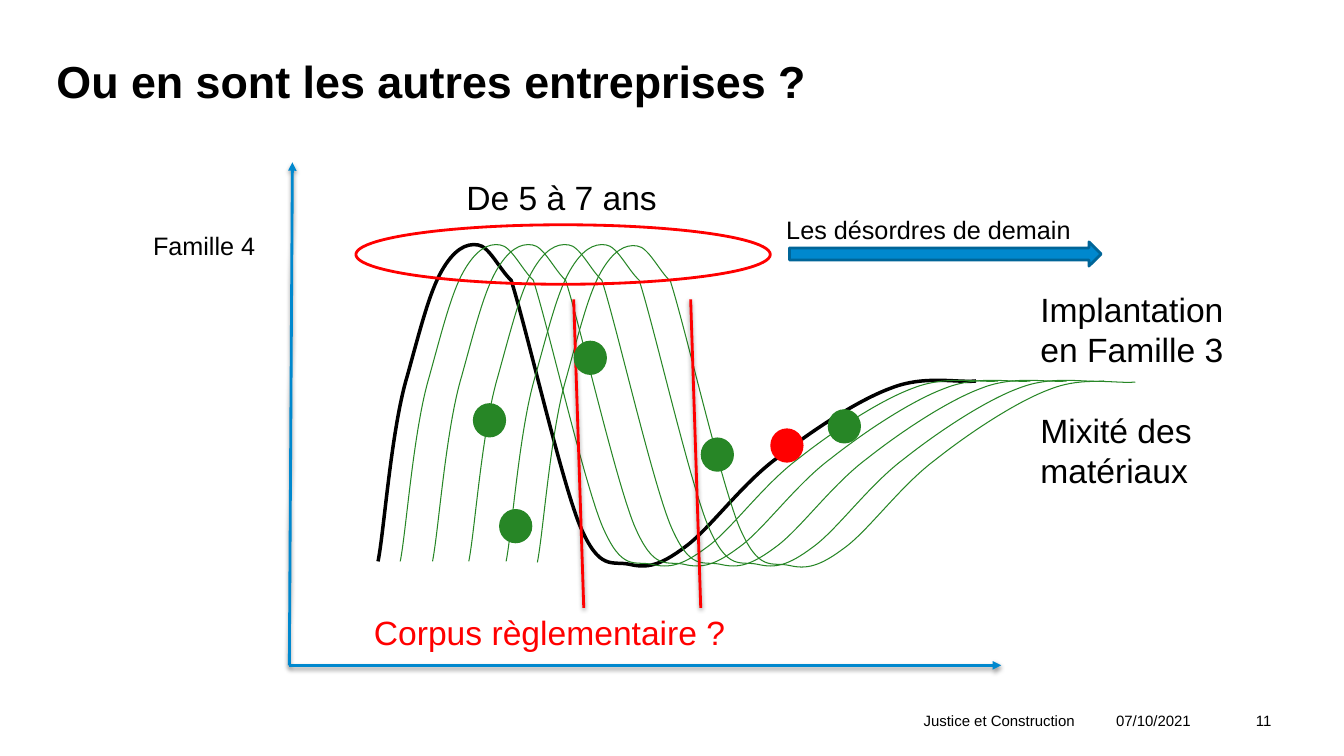
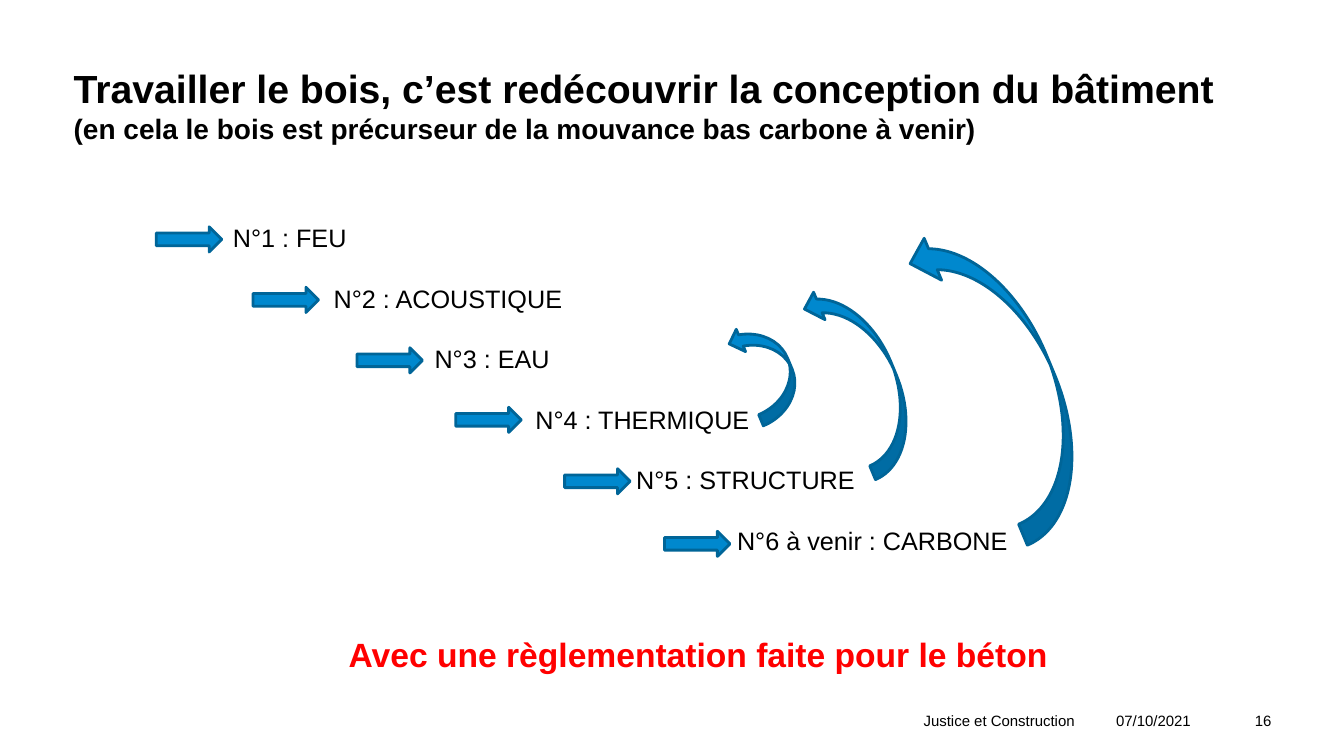
"""Build two slides on the state of timber construction and its regulation."""
import copy

import pptx
import pptx.dml.color
import pptx.enum.shapes
import pptx.enum.text
import pptx.oxml
import pptx.oxml.ns
import pptx.util

Inches = pptx.util.Inches
Pt = pptx.util.Pt
RGBColor = pptx.dml.color.RGBColor
Shape = pptx.enum.shapes.MSO_SHAPE
Align = pptx.enum.text.PP_ALIGN
qualified = pptx.oxml.ns.qn

BLACK = RGBColor(0x00, 0x00, 0x00)
RED = RGBColor(0xFF, 0x00, 0x00)
GREEN = RGBColor(0x27, 0x86, 0x26)
BLUE = RGBColor(0x00, 0x88, 0xCE)
DARK_BLUE = RGBColor(0x00, 0x65, 0x98)
FONT = "Arial"
DRAWING = pptx.oxml.ns.nsdecls("a")
SHADOW = (
    f'<a:effectLst {DRAWING}><a:outerShdw blurRad="39370" dist="20320" dir="5400000" rotWithShape="0">'
    '<a:srgbClr val="000000"><a:alpha val="38000"/></a:srgbClr></a:outerShdw></a:effectLst>'
)


def write(shape, box, text, size, color=BLACK, bold=False, align=Align.LEFT):
    """Place a text shape and format all its paragraphs."""
    shape.left, shape.top, shape.width, shape.height = [Inches(value) for value in box]
    text_frame = shape.text_frame
    text_frame.word_wrap = True
    text_frame.auto_size = pptx.enum.text.MSO_AUTO_SIZE.NONE
    text_frame.text = text
    for paragraph in text_frame.paragraphs:
        paragraph.alignment = align
        for run in paragraph.runs:
            run.font.name = FONT
            run.font.size = Pt(size)
            run.font.bold = bold
            run.font.color.rgb = color
    return text_frame


def draw(slide, kind, box, fill=None, line=None):
    """Add a preset shape with the given fill and outline."""
    shape = slide.shapes.add_shape(kind, *[Inches(value) for value in box])
    shape.shadow.inherit = False
    if fill is None:
        shape.fill.background()
    else:
        shape.fill.solid()
        shape.fill.fore_color.rgb = fill
    if line is None:
        shape.line.fill.background()
    else:
        shape.line.color.rgb = line
        shape.line.width = Pt(2)
    return shape


presentation = pptx.Presentation()
presentation.slide_width = Inches(13.33)
presentation.slide_height = Inches(7.5)

slides = []
for layout_index, number, title, box, sizes in (
    (5, "11", "Ou en sont les autres entreprises ?", (0.56, 0.52, 11.87, 0.56), (32,)),
    (1, "16", "Travailler le bois, c’est redécouvrir la conception du bâtiment\v"
     "(en cela le bois est précurseur de la mouvance bas carbone à venir)",
     (0.73, 0.43, 11.87, 1.21), (28, 20)),
):
    slide = presentation.slides.add_slide(presentation.slide_layouts[layout_index])
    slides.append(slide)
    title_frame = write(slide.shapes.title, box, title, sizes[0], bold=True)
    title_frame.vertical_anchor = pptx.enum.text.MSO_ANCHOR.MIDDLE
    title_frame.margin_left = title_frame.margin_right = 0
    title_paragraph = title_frame.paragraphs[0]
    for run, size in zip(title_paragraph.runs, sizes):
        run.font.size = Pt(size)
    for line_break in title_paragraph._p.findall(qualified("a:br")):
        line_break.append(copy.deepcopy(title_paragraph.runs[0]._r.rPr))
    for text, left, width in (
        ("Justice et Construction", 4.13, 6.63),
        ("07/10/2021", 10.76, 1.15),
        (number, 11.91, 0.8),
    ):
        write(slide.shapes.add_textbox(0, 0, 0, 0), (left, 7.01, width, 0.39), text, 10.7, align=Align.RIGHT)

curve_slide, steps_slide = slides

CURVE_START = (3.75, 5.57)
CURVE_SEGMENTS = (
    ((3.81, 5.27), (3.88, 4.26), (4.04, 3.73)),
    ((4.17, 3.26), (4.26, 2.9), (4.38, 2.69)),
    ((4.5, 2.48), (4.62, 2.41), (4.74, 2.43)),
    ((4.85, 2.44), (4.96, 2.68), (5.07, 2.78)),
    ((5.22, 3.25), (5.56, 4.74), (5.75, 5.21)),
    ((5.95, 5.68), (6.07, 5.56), (6.25, 5.6)),
    ((6.42, 5.64), (6.55, 5.61), (6.79, 5.43)),
    ((7.03, 5.26), (7.35, 4.81), (7.7, 4.55)),
    ((8.04, 4.28), (8.51, 3.97), (8.84, 3.85)),
    ((9.17, 3.72), (9.5, 3.8), (9.68, 3.78)),
)
anchors = [CURVE_START] + [segment[-1] for segment in CURVE_SEGMENTS]
curve_left = min(x for x, y in anchors)
curve_top = min(y for x, y in anchors)

for shift_x, shift_y, color, width in (
    (0, 0, BLACK, 2.5),
    (0.22, 0, GREEN, 0.75),
    (0.54, 0, GREEN, 0.75),
    (0.9, 0, GREEN, 0.75),
    (1.27, 0, GREEN, 0.75),
    (1.58, 0.01, GREEN, 0.75),
):
    points = [(Inches(x + shift_x), Inches(y + shift_y)) for x, y in anchors]
    builder = curve_slide.shapes.build_freeform(*points[0])
    builder.add_line_segments(points[1:], close=False)
    curve = builder.convert_to_shape()
    curve.shadow.inherit = False
    curve.fill.background()
    curve.line.color.rgb = color
    curve.line.width = Pt(width)
    straight_parts = list(curve._element.iter(qualified("a:lnTo")))
    for straight_part, segment in zip(straight_parts, CURVE_SEGMENTS):
        controls = "".join(
            f'<a:pt x="{Inches(x - curve_left)}" y="{Inches(y - curve_top)}"/>' for x, y in segment
        )
        straight_part.getparent().replace(
            straight_part,
            pptx.oxml.parse_xml(f"<a:cubicBezTo {DRAWING}>{controls}</a:cubicBezTo>"),
        )

for start_x, start_y, end_x, end_y, color, arrow in (
    (2.87, 6.6, 2.9, 1.61, BLUE, True),
    (2.87, 6.6, 9.93, 6.6, BLUE, True),
    (5.69, 2.97, 5.79, 6.03, RED, False),
    (6.85, 2.97, 6.95, 6.03, RED, False),
):
    connector = curve_slide.shapes.add_connector(
        pptx.enum.shapes.MSO_CONNECTOR.STRAIGHT,
        Inches(start_x), Inches(start_y), Inches(end_x), Inches(end_y),
    )
    connector.line.color.rgb = color
    connector.line.width = Pt(2)
    properties = connector._element.spPr
    properties.append(pptx.oxml.parse_xml(SHADOW))
    if arrow:
        properties.find(qualified("a:ln")).append(
            pptx.oxml.parse_xml(f'<a:tailEnd {DRAWING} type="triangle"/>')
        )

draw(curve_slide, Shape.OVAL, (3.53, 2.23, 4.11, 0.59), line=RED)
for left, top, color in (
    (7.64, 4.25, RED),
    (8.21, 4.06, GREEN),
    (5.69, 3.38, GREEN),
    (4.69, 4, GREEN),
    (4.95, 5.05, GREEN),
    (6.95, 4.34, GREEN),
):
    draw(curve_slide, Shape.OVAL, (left, top, 0.33, 0.34), fill=color)
draw(curve_slide, Shape.RIGHT_ARROW, (7.83, 2.4, 3.09, 0.24), BLUE, DARK_BLUE)

for text, box, size, color, align in (
    ("De 5 à 7 ans", (2.86, 1.71, 5.42, 0.5), 24, BLACK, Align.CENTER),
    ("Corpus règlementaire ?", (3.61, 6.02, 3.71, 0.5), 24, RED, Align.LEFT),
    ("Famille 4", (0.74, 2.24, 1.89, 0.4), 18, BLACK, Align.RIGHT),
    ("Les désordres de demain", (7.7, 2.08, 3.27, 0.4), 18, BLACK, Align.LEFT),
):
    write(curve_slide.shapes.add_textbox(0, 0, 0, 0), box, text, size, color, align=align)

outlook_frame = write(
    curve_slide.shapes.add_textbox(0, 0, 0, 0), (10.22, 2.82, 2.28, 2.12),
    "Implantation en Famille 3\nMixité des matériaux", 24,
)
for paragraph in outlook_frame.paragraphs:
    paragraph.line_spacing = Pt(28.7)
outlook_frame.paragraphs[1].space_before = Pt(28.7)

STEPS = (
    ("N°1 : FEU", 1.55, 2.25),
    ("N°2 : ACOUSTIQUE", 2.51, 2.85),
    ("N°3 : EAU", 3.54, 3.45),
    ("N°4 : THERMIQUE", 4.52, 4.04),
    ("N°5 : STRUCTURE", 5.6, 4.65),
    ("N°6 à venir : CARBONE", 6.59, 5.27),
)
steps_frame = write(
    steps_slide.placeholders[1], (2.21, 2.16, 8.09, 3.74),
    "\n".join(text for text, left, top in STEPS), 18,
)
for index, (paragraph, (text, left, top)) in enumerate(zip(steps_frame.paragraphs, STEPS)):
    paragraph.line_spacing = Pt(21.6)
    paragraph.space_before = Pt(21.6 if index else 0)
    paragraph_properties = paragraph._p.get_or_add_pPr()
    paragraph_properties.set("marL", str(Inches(index)))
    paragraph_properties.set("indent", "0")
    paragraph_properties.append(pptx.oxml.parse_xml(f"<a:buNone {DRAWING}/>"))
    draw(steps_slide, Shape.RIGHT_ARROW, (left, top, 0.65, 0.25), BLUE, DARK_BLUE)

for box in ((9.53, 2.11, 0.9, 3.25), (7.36, 3.17, 0.48, 1), (8.28, 2.74, 0.59, 1.98)):
    return_arrow = draw(steps_slide, Shape.CURVED_RIGHT_ARROW, box, BLUE, DARK_BLUE)
    return_arrow.rotation = 157.4

write(
    steps_slide.shapes.add_textbox(0, 0, 0, 0), (2.32, 6.24, 9.21, 0.5),
    "Avec une règlementation faite pour le béton", 24, RED, True, Align.CENTER,
)

presentation.save("out.pptx")
